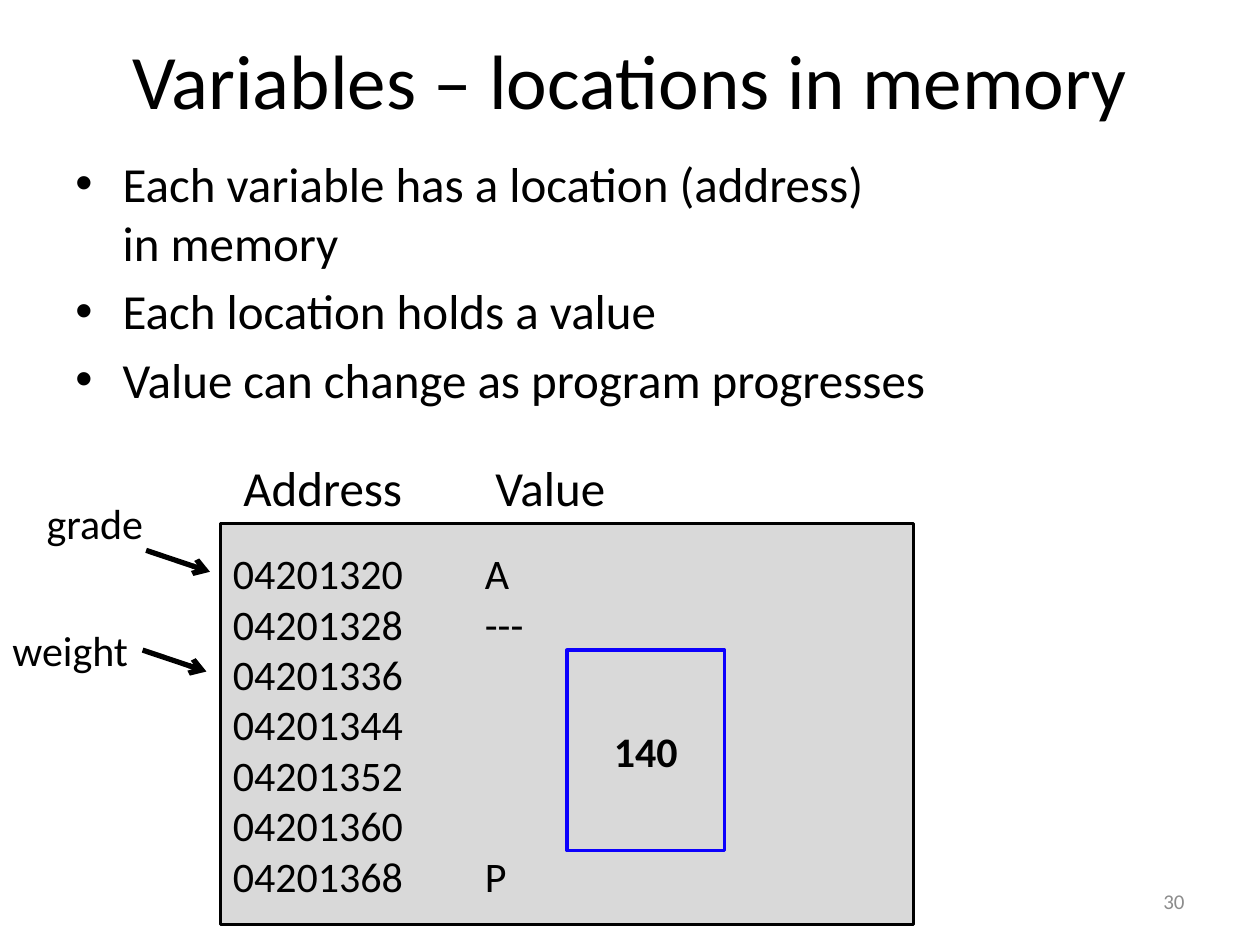
"""Build a slide showing variables as locations in memory."""
from dataclasses import dataclass

from lxml.etree import SubElement
from pptx import Presentation
from pptx.dml.color import RGBColor
from pptx.enum.shapes import MSO_CONNECTOR, MSO_SHAPE
from pptx.enum.text import MSO_ANCHOR, MSO_AUTO_SIZE, PP_ALIGN
from pptx.oxml.ns import qn
from pptx.util import Pt

FONT = "Calibri"
BLACK, GRAY, PALE, BLUE = "000000", "8C8C8C", "D9D9D9", "0D01FD"
BULLETS = [
    "Each variable has a location (address) \nin memory",
    "Each location holds a value",
    "Value can change as program progresses",
]
FIRST_ADDRESS, ADDRESS_STEP = 4201320, 8
VALUES = ["A", "---", "", "", "", "", "P"]


@dataclass
class Area:
    """A rectangle in points."""
    left: float
    top: float
    width: float
    height: float

    def lengths(self) -> tuple:
        """Return the four lengths for a python-pptx call."""
        return Pt(self.left), Pt(self.top), Pt(self.width), Pt(self.height)


@dataclass
class Style:
    """The look of a text."""
    size: float
    color: str = BLACK
    bold: bool = False
    align: PP_ALIGN = PP_ALIGN.LEFT
    anchor: MSO_ANCHOR = MSO_ANCHOR.TOP


@dataclass
class Variable:
    """A named variable with its label area and arrow start."""
    name: str
    label: Area
    arrow_left: float
    arrow_top: float


VARIABLES = [
    Variable("weight", Area(0, 353.5, 81.5, 36), 81.5, 371.5),
    Variable("grade", Area(19.5, 281, 70.5, 36), 83.5, 314.5),
]


def color_of(value: str) -> RGBColor:
    """Turn a hex string into a colour."""
    return RGBColor.from_string(value)


def write(frame, lines: list[str], style: Style, wrap: bool = True) -> None:
    """Fill a text frame with one paragraph per line."""
    frame.word_wrap = wrap
    frame.auto_size = MSO_AUTO_SIZE.NONE
    frame.vertical_anchor = style.anchor
    for index, line in enumerate(lines):
        para = frame.paragraphs[0] if index == 0 else frame.add_paragraph()
        para.alignment = style.align
        for part_index, part in enumerate(line.split("\n")):
            if part_index:
                para.add_line_break()
            span = para.add_run()
            span.text = part
            span.font.name = FONT
            span.font.size = Pt(style.size)
            span.font.bold = style.bold
            span.font.color.rgb = color_of(style.color)


def add_text(page, area: Area, lines: list[str], style: Style, wrap: bool = True):
    """Add a text box and return its frame."""
    frame = page.shapes.add_textbox(*area.lengths()).text_frame
    write(frame, lines, style, wrap)
    return frame


def add_box(page, area: Area, border: str, lines: list[str], style: Style) -> None:
    """Add a pale rectangle with text."""
    box = page.shapes.add_shape(MSO_SHAPE.RECTANGLE, *area.lengths())
    box.shadow.inherit = False
    box.fill.solid()
    box.fill.fore_color.rgb = color_of(PALE)
    box.line.color.rgb = color_of(border)
    box.line.width = Pt(2)
    write(box.text_frame, lines, style)


def add_bullets(frame) -> None:
    """Give each paragraph a hanging bullet."""
    for para in frame.paragraphs:
        para.space_before = Pt(5.6)
        properties = para._p.get_or_add_pPr()
        properties.set("marL", str(Pt(27)))
        properties.set("indent", str(-Pt(27)))
        SubElement(properties, qn("a:buFont"), typeface="Arial")
        SubElement(properties, qn("a:buChar"), char="•")


def add_variable(page, variable: Variable) -> None:
    """Add a variable name and the arrow to its address."""
    add_text(page, variable.label, [variable.name], Style(24), wrap=False)
    left, top = variable.arrow_left, variable.arrow_top
    arrow = page.shapes.add_connector(
        MSO_CONNECTOR.STRAIGHT, Pt(left), Pt(top), Pt(left + 36.5), Pt(top + 12.25))
    arrow.line.color.rgb = color_of(BLACK)
    arrow.line.width = Pt(3)
    SubElement(arrow.line._get_or_add_ln(), qn("a:tailEnd"), type="arrow")
    SubElement(arrow._element.spPr, qn("a:effectLst"))


def main() -> None:
    """Build and save the deck."""
    deck = Presentation()
    deck.slide_width, deck.slide_height = Pt(720), Pt(540)
    page = deck.slides.add_slide(deck.slide_layouts[5])

    title = page.shapes.title
    title.left, title.top, title.width, title.height = Area(36, 0, 648, 90).lengths()
    middle = MSO_ANCHOR.MIDDLE
    write(title.text_frame, ["Variables – locations in memory"],
          Style(44, align=PP_ALIGN.CENTER, anchor=middle))

    add_bullets(add_text(page, Area(36, 84, 648, 234), BULLETS, Style(28)))
    add_text(page, Area(516, 500.5, 168, 28.75), ["30"],
             Style(12, GRAY, align=PP_ALIGN.RIGHT, anchor=middle))

    rows = [f"{FIRST_ADDRESS + ADDRESS_STEP * index:08d}" + (f"\t\t{value}" if value else "")
            for index, value in enumerate(VALUES)]
    add_box(page, Area(126, 299.25, 396, 229), BLACK, rows, Style(24, anchor=middle))
    add_text(page, Area(132, 258, 384, 41), ["Address\t\tValue"], Style(28))
    for variable in VARIABLES:
        add_variable(page, variable)
    add_box(page, Area(324, 371.5, 90, 114.5), BLUE, ["140"],
            Style(24, bold=True, align=PP_ALIGN.CENTER, anchor=middle))

    deck.save("out.pptx")


if __name__ == "__main__":
    main()
